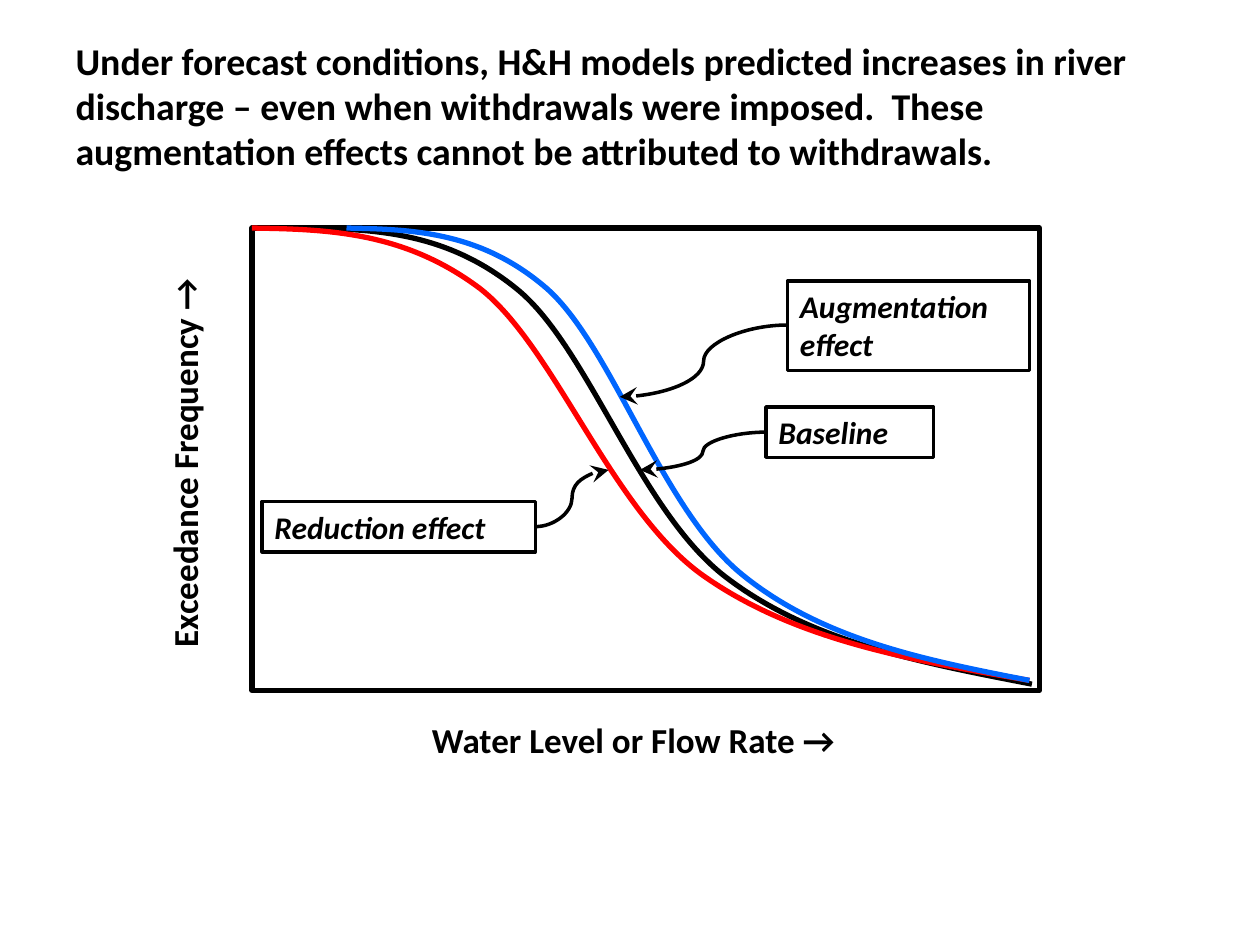
from pptx import Presentation
from pptx import util as u
from pptx.dml.color import RGBColor
from pptx.enum import shapes, text
from pptx.oxml.ns import qn
from lxml import etree

BLACK = RGBColor(0, 0, 0)
RED = RGBColor(0xFF, 0, 0)
BLUE = RGBColor(0, 0x66, 0xFF)
FONT = "Calibri"

HEADLINE = ("Under forecast conditions, H&H models predicted increases in river "
            "discharge – even when withdrawals were imposed.  These "
            "augmentation effects cannot be attributed to withdrawals.")
PLOT = (2, 1.81, 6.25, 3.67)

# Each curve: colour, then a start point followed by three Bézier points per segment
CURVES = [
    (BLACK, [(2.42, 1.81), (2.98, 1.82), (3.55, 1.84), (4.11, 2.3), (4.67, 2.76),
             (5.08, 4.06), (5.76, 4.58), (6.44, 5.1), (7.32, 5.26), (8.19, 5.43)]),
    (RED, [(2, 1.81), (2.61, 1.82), (3.21, 1.84), (3.81, 2.29), (4.4, 2.75),
           (4.85, 4.04), (5.57, 4.56), (6.3, 5.08), (7.23, 5.24), (8.17, 5.4)]),
    (BLUE, [(2.75, 1.81), (3.28, 1.82), (3.82, 1.84), (4.34, 2.29), (4.86, 2.75),
            (5.25, 4.04), (5.89, 4.56), (6.53, 5.08), (7.35, 5.24), (8.17, 5.4)]),
]
# Axis title, box, rotation
AXES = [
    ("Water Level or Flow Rate →", (3.33, 5.65, 3.75, 0.44), 0),
    ("Exceedance Frequency →", (-0.16, 3.39, 3.25, 0.44), 270),
]
# Callout, box, arrow start, arrow tip
CALLOUTS = [
    ("Reduction effect", (2.08, 3.98, 2.17, 0.4), (4.25, 4.18), (4.83, 3.73)),
    ("Augmentation effect", (6.25, 2.23, 1.92, 0.71), (6.25, 2.58), (4.92, 3.15)),
    ("Baseline", (6.08, 3.23, 1.33, 0.4), (6.08, 3.43), (5.08, 3.73)),
]


def inches(lengths):
    return [u.Inches(length) for length in lengths]


def write(frame, wording, size, italic=False):
    frame.word_wrap = True
    paragraph = frame.paragraphs[0]
    paragraph.alignment = text.PP_ALIGN.LEFT
    run = paragraph.add_run()
    run.text = wording
    font = run.font
    font.name, font.size, font.bold, font.italic = FONT, u.Pt(size), True, italic
    font.color.rgb = BLACK


def outline(shape, colour, width):
    shape.shadow.inherit = False
    shape.fill.background()
    shape.line.color.rgb = colour
    shape.line.width = u.Pt(width)


def add_box(slide, box, width):
    rectangle = slide.shapes.add_shape(shapes.MSO_SHAPE.RECTANGLE, *inches(box))
    outline(rectangle, BLACK, width)
    return rectangle


def add_curve(slide, colour, points):
    """Draw the control polygon, then turn every three line segments into a Bézier."""
    start, *controls = [inches(point) for point in points]
    builder = slide.shapes.build_freeform(*start)
    builder.add_line_segments(controls, close=False)
    curve = builder.convert_to_shape()
    outline(curve, colour, 3)
    segments = list(curve.element.iter(qn("a:lnTo")))
    for first in range(0, len(segments), 3):
        bezier = etree.Element(qn("a:cubicBezTo"))
        segments[first].addprevious(bezier)
        for segment in segments[first:first + 3]:
            bezier.append(segment[0])
            segment.getparent().remove(segment)


def add_arrow(slide, start, tip):
    arrow = slide.shapes.add_connector(shapes.MSO_CONNECTOR.CURVE, *inches(start + tip))
    arrow.line.color.rgb = BLACK
    arrow.line.width = u.Pt(2)
    properties = arrow.element.spPr
    etree.SubElement(properties.find(qn("a:ln")), qn("a:tailEnd"),
                     type="stealth", w="lg", len="lg")
    etree.SubElement(properties, qn("a:effectLst"))


def main():
    deck = Presentation()
    deck.slide_width, deck.slide_height = inches((10, 7.5))
    slide = deck.slides.add_slide(deck.slide_layouts[5])

    title = slide.shapes.title
    title.left, title.top, title.width, title.height = inches((0.5, 0.25, 9, 1.25))
    title.text_frame.vertical_anchor = text.MSO_ANCHOR.MIDDLE
    title.text_frame.margin_bottom = u.Inches(0.13)
    write(title.text_frame, HEADLINE, 21.6)

    add_box(slide, PLOT, 3)
    for colour, points in CURVES:
        add_curve(slide, colour, points)
    for wording, box, rotation in AXES:
        label = slide.shapes.add_textbox(*inches(box))
        label.rotation = rotation
        write(label.text_frame, wording, 20)
    for wording, box, start, tip in CALLOUTS:
        callout = add_box(slide, box, 2)
        callout.text_frame.vertical_anchor = text.MSO_ANCHOR.TOP
        write(callout.text_frame, wording, 18, italic=True)
        add_arrow(slide, start, tip)

    deck.save("out.pptx")


if __name__ == "__main__":
    main()
